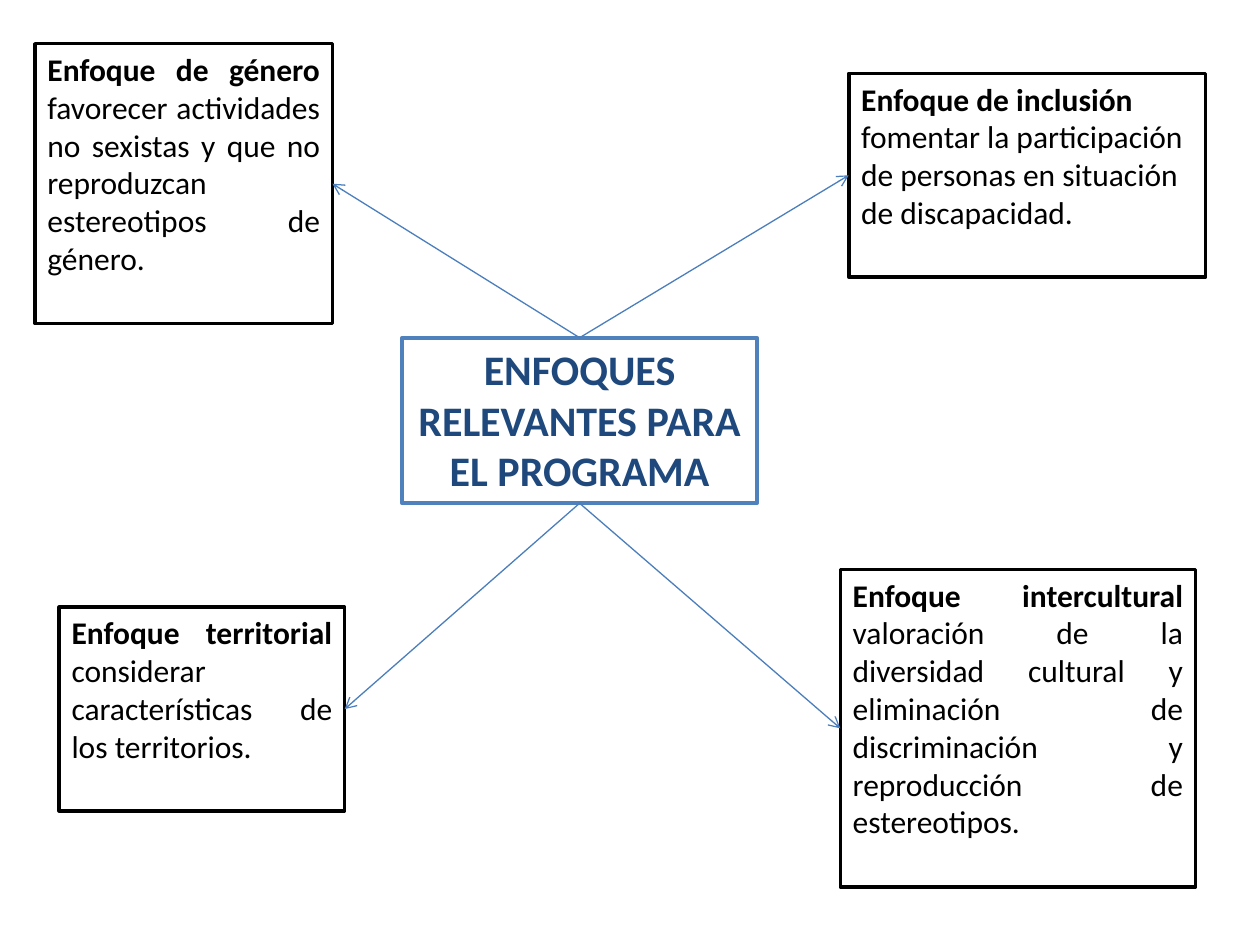
"""Build a slide with four approaches around a central programme title."""
from lxml.etree import SubElement
from pptx import Presentation
from pptx.dml.color import RGBColor
from pptx.enum.shapes import MSO_CONNECTOR as Connector, MSO_SHAPE as Shape
from pptx.enum.text import MSO_ANCHOR as Anchor, PP_ALIGN as Align
from pptx.oxml.ns import qn
from pptx.util import Pt

COLORS = {
    "white": "FFFFFF",
    "black": "000000",
    "border": "4F81BD",
    "title": "1F497D",
    "arrow": "4B7EBC",
}
TOP, LEFT, BOTTOM, RIGHT = range(4)


def color(name):
    return RGBColor.from_string(COLORS[name])


def add_box(page, bounds, border, ink, size, align, runs):
    box = page.shapes.add_shape(Shape.RECTANGLE, *map(Pt, bounds))
    box.shadow.inherit = False
    box.fill.solid()
    box.fill.fore_color.rgb = color("white")
    box.line.color.rgb = color(border)
    box.line.width = Pt(2)
    frame = box.text_frame
    frame.word_wrap = True
    frame.vertical_anchor = Anchor.TOP
    para = frame.paragraphs[0]
    para.alignment = align
    for text, bold in runs:
        span = para.add_run()
        span.text = text
        span.font.name = "Calibri"
        span.font.size = Pt(size)
        span.font.bold = bold
        span.font.color.rgb = color(ink)
    return box


deck = Presentation()
deck.slide_width, deck.slide_height = Pt(720), Pt(540)
page = deck.slides.add_slide(deck.slide_layouts[6])

center = add_box(page, (229.7, 193, 203, 94.6), "border", "title", 24, Align.CENTER,
                 [("ENFOQUES RELEVANTES PARA EL PROGRAMA", True)])

approaches = [
    ((20, 25, 170, 160), Align.JUSTIFY, "Enfoque de género ",
     "favorecer actividades no sexistas y que no reproduzcan estereotipos de género.",
     TOP, RIGHT),
    ((33.8, 347, 163.2, 116.4), Align.JUSTIFY, "Enfoque territorial ",
     "considerar características de los territorios.",
     BOTTOM, RIGHT),
    ((480.2, 325.4, 203, 181.6), Align.JUSTIFY, "Enfoque intercultural ",
     "valoración de la diversidad cultural y eliminación de discriminación "
     "y reproducción de estereotipos.",
     BOTTOM, LEFT),
    ((485, 42, 204, 116.4), Align.LEFT, "Enfoque de inclusión ",
     "fomentar la participación de personas en situación de discapacidad.",
     TOP, LEFT),
]
for bounds, align, heading, detail, center_side, box_side in approaches:
    box = add_box(page, bounds, "black", "black", 18, align,
                  [(heading, True), (detail, False)])
    arrow = page.shapes.add_connector(Connector.STRAIGHT, 0, 0, 0, 0)
    arrow.begin_connect(center, center_side)
    arrow.end_connect(box, box_side)
    arrow.line.color.rgb = color("arrow")
    arrow.line.width = Pt(0.75)
    SubElement(arrow.line._get_or_add_ln(), qn("a:tailEnd"), type="arrow")
    SubElement(arrow._element.spPr, qn("a:effectLst"))

deck.save("out.pptx")
